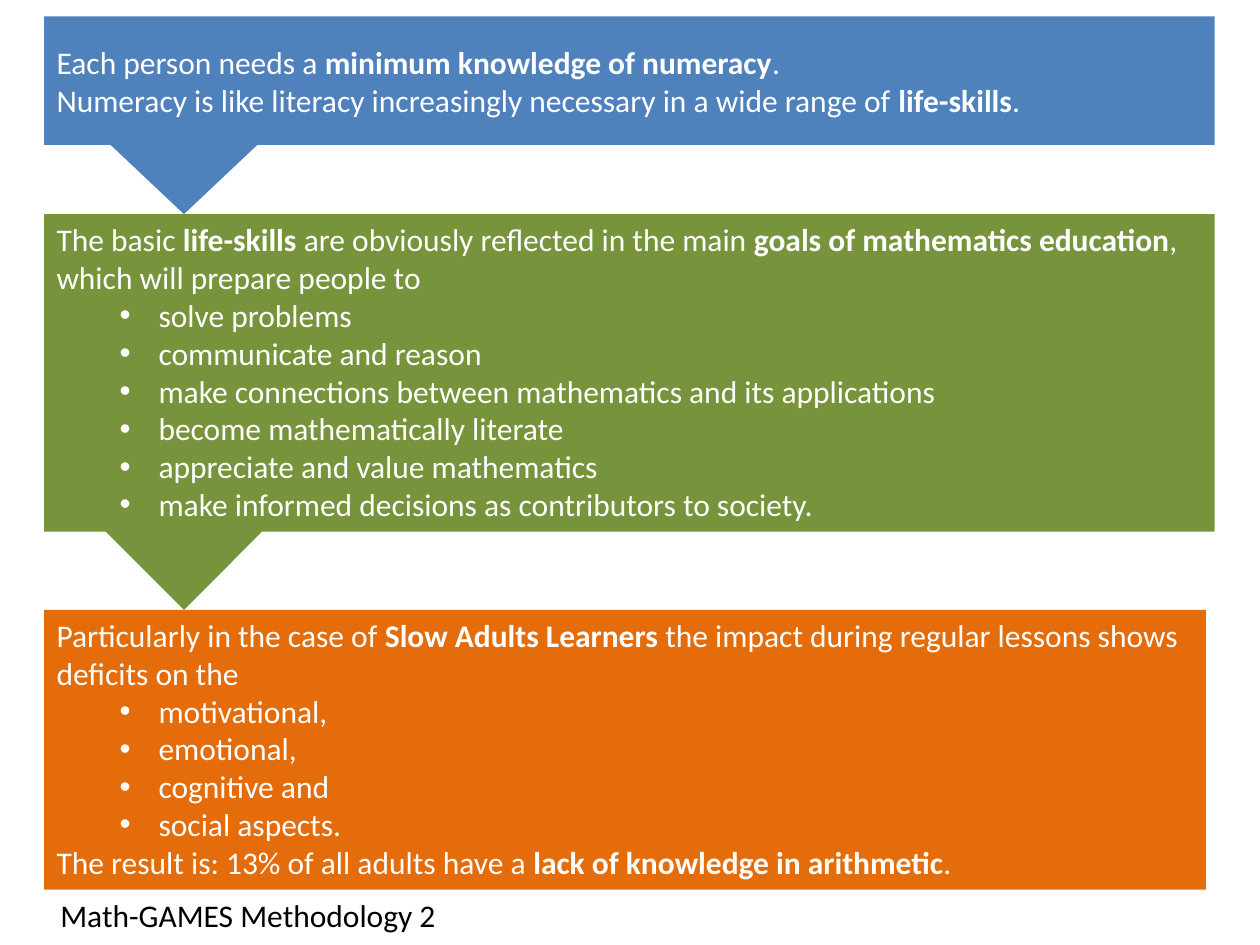
import pptx
import pptx.dml.color
import pptx.enum.shapes
import pptx.enum.text
import pptx.util
from lxml import etree

SHAPE = pptx.enum.shapes.MSO_SHAPE
ANCHOR = pptx.enum.text.MSO_ANCHOR
ALIGN = pptx.enum.text.PP_ALIGN
IN = pptx.util.Inches

WIDTH, HEIGHT = 10, 7.5
LEFT = 0.035 * WIDTH
ARROW_AXIS = 0.146 * WIDTH
BULLET = "• "

# Panels: top, width, height, fill, arrow size, anchor, lines (** marks bold)
PANELS = [
    (0.13, 9.29, 1.02, "4F81BD", (1.42, 1.34), ANCHOR.MIDDLE, [
        "Each person needs a **minimum knowledge of numeracy**.",
        "Numeracy is like literacy increasingly necessary in a wide range of "
        "**life-skills**.",
    ]),
    (1.7, 9.29, 2.52, "77933C", (1.34, 1.34), ANCHOR.TOP, [
        "The basic **life-skills** are obviously reflected in the main "
        "**goals of mathematics education**, which will prepare people to",
        "• solve problems",
        "• communicate and reason",
        "• make connections between mathematics and its applications",
        "• become mathematically literate",
        "• appreciate and value mathematics",
        "• make informed decisions as contributors to society.",
    ]),
    (4.84, 9.22, 2.22, "E46C0A", None, ANCHOR.TOP, [
        "Particularly in the case of **Slow Adults Learners **the impact "
        "during regular lessons shows deficits on the",
        "• motivational,",
        "• emotional,",
        "• cognitive and",
        "• social aspects.",
        "The result is: 13% of all adults have a "
        "**lack of knowledge in arithmetic**.",
    ]),
]


def rgb(hex_colour):
    return pptx.dml.color.RGBColor.from_string(hex_colour)


def add_block(s, preset, box, fill):
    sp = s.shapes.add_shape(preset, *map(IN, box))
    sp.shadow.inherit = False
    sp.fill.solid()
    sp.fill.fore_color.rgb = rgb(fill)
    sp.line.fill.background()
    return sp


def set_bullet(p):
    p.level = 1
    pPr = p._p.get_or_add_pPr()
    pPr.set("marL", str(IN(0.81)))
    pPr.set("indent", str(IN(-0.31)))
    ns = pptx.oxml.ns.qn
    etree.SubElement(pPr, ns("a:buFont")).set("typeface", "Arial")
    etree.SubElement(pPr, ns("a:buChar")).set("char", BULLET.strip())


def write_lines(tf, lines, colour, anchor):
    for name, value in {"word_wrap": True, "vertical_anchor": anchor}.items():
        setattr(tf, name, value)
    for i, line in enumerate(lines):
        p = tf.add_paragraph() if i else tf.paragraphs[0]
        p.alignment = ALIGN.LEFT
        if line.startswith(BULLET):
            set_bullet(p)
            line = line[len(BULLET):]
        # Every second part lies between bold marks
        for j, part in enumerate(line.split("**")):
            r = p.add_run()
            r.text = part
            style = {"name": "Calibri", "size": pptx.util.Pt(18), "bold": j % 2 == 1}
            for name, value in style.items():
                setattr(r.font, name, value)
            r.font.color.rgb = rgb(colour)


def add_arrow(s, tip, size, fill):
    w, h = size
    add_block(s, SHAPE.DOWN_ARROW, (ARROW_AXIS - w / 2, tip - h, w, h), fill)


def add_panel(s, box, fill, anchor, lines):
    sp = add_block(s, SHAPE.RECTANGLE, box, fill)
    write_lines(sp.text_frame, lines, "FFFFFF", anchor)


def add_caption(s, box, text):
    tb = s.shapes.add_textbox(*map(IN, box))
    write_lines(tb.text_frame, [text], "000000", ANCHOR.TOP)


def main():
    prs = pptx.Presentation()
    prs.slide_width, prs.slide_height = IN(WIDTH), IN(HEIGHT)
    s = prs.slides.add_slide(prs.slide_layouts[6])

    # Arrows lie behind the panels, each tip touching the next panel
    for panel, below in zip(PANELS, PANELS[1:]):
        add_arrow(s, below[0], panel[4], panel[3])

    # Text panels
    for top, width, height, fill, _, anchor, lines in PANELS:
        add_panel(s, (LEFT, top, width, height), fill, anchor, lines)

    # Caption under the last panel
    top, _, height = PANELS[-1][:3]
    add_caption(s, (0.38, top + height, 5.05, 0.4), "Math-GAMES Methodology 2")

    prs.save("out.pptx")


if __name__ == "__main__":
    main()
